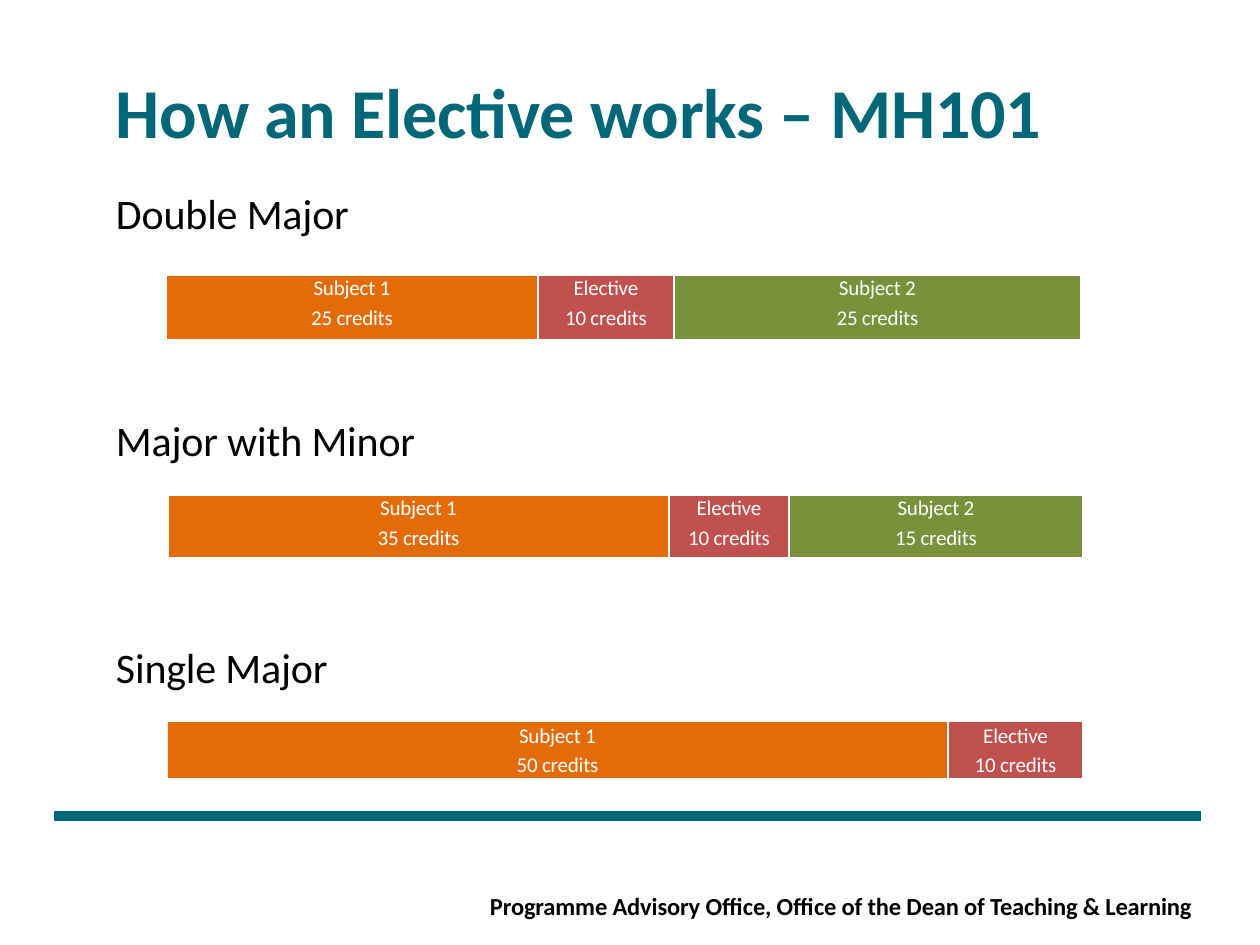
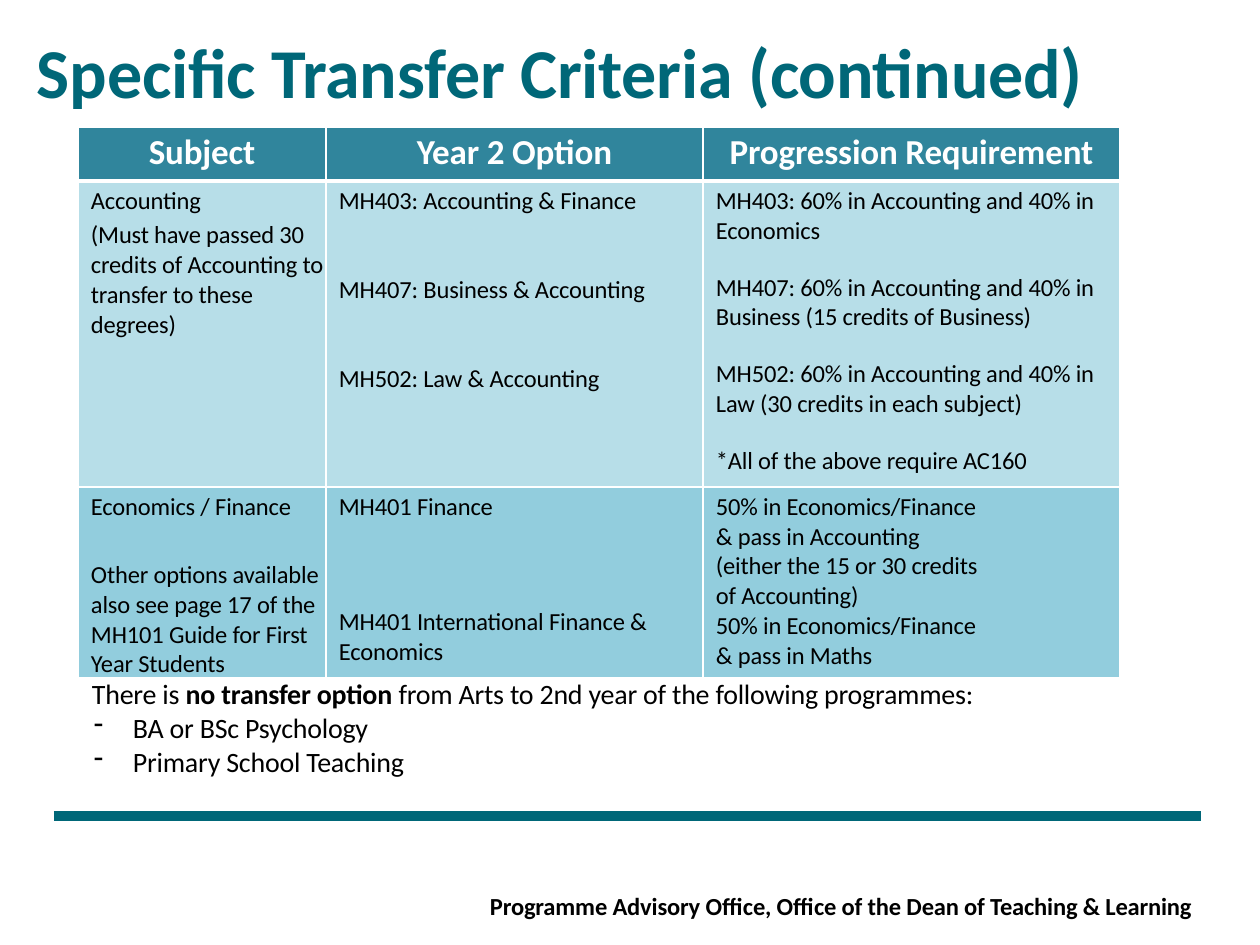
from lxml.etree import SubElement
from pptx import Presentation
from pptx.dml.color import RGBColor
from pptx.enum.shapes import MSO_CONNECTOR, MSO_SHAPE
from pptx.enum.text import MSO_ANCHOR, PP_ALIGN
from pptx.oxml import parse_xml
from pptx.oxml.ns import nsdecls, qn
from pptx.util import Pt

PX = 7257.14  # EMU per pixel, 126 px to the inch
FONT = "Calibri"
TEAL = RGBColor(0x00, 0x67, 0x78)
BLACK = RGBColor(0x00, 0x00, 0x00)
WHITE = RGBColor(0xFF, 0xFF, 0xFF)
ORANGE = RGBColor(0xE3, 0x6C, 0x09)
RED = RGBColor(0xC0, 0x50, 0x4D)
GREEN = RGBColor(0x77, 0x92, 0x3B)
HEADER_BLUE = RGBColor(0x30, 0x85, 0x9C)
PALE_BLUE = RGBColor(0xB7, 0xDE, 0xE8)
MID_BLUE = RGBColor(0x92, 0xCD, 0xDD)
FOOTER = "Programme Advisory Office, Office of the Dean of Teaching & Learning"

# Each bar: heading, heading top, left, top, height, segments of (name, credits, width, colour)
TABLE_BARS = [
    ("Double Major", 186, 166, 275, 66,
     [("Subject 1", 25, 372, ORANGE), ("Elective", 10, 136, RED), ("Subject 2", 25, 407, GREEN)]),
    ("Major with Minor", 413, 168, 495, 64,
     [("Subject 1", 35, 501, ORANGE), ("Elective", 10, 120, RED), ("Subject 2", 15, 294, GREEN)]),
]
SINGLE_BAR = ("Single Major", 640, 168, 722, 56,
              [("Subject 1", 50, 780, ORANGE), ("Elective", 10, 134, RED)])

# Each criteria row: height, colour, cells of (space before later paragraphs, paragraphs)
CRITERIA = [
    (306, PALE_BLUE, [
        (2.8, ["Accounting",
               "(Must have passed 30 credits of Accounting to transfer to these degrees)"]),
        (34, ["MH403: Accounting & Finance", "MH407: Business & Accounting",
              "MH502: Law & Accounting"]),
        (15.5, ["MH403: 60% in Accounting and 40% in Economics",
                "MH407: 60% in Accounting and 40% in Business (15 credits of Business)",
                "MH502: 60% in Accounting and 40% in Law (30 credits in each subject)",
                "*All of the above require AC160"]),
    ]),
    (191, MID_BLUE, [
        (22, ["Economics / Finance",
              "Other options available also see page 17 of the MH101 Guide for First Year Students"]),
        (49, ["MH401 Finance", "MH401 International Finance & Economics"]),
        (0, ["50% in Economics/Finance\v& pass in Accounting\v"
             "(either the 15 or 30 credits\vof Accounting)",
             "50% in Economics/Finance\v& pass in Maths"]),
    ]),
]


def px(value):
    return round(value * PX)


def style_paragraph(para, size, color, bold=False, align=PP_ALIGN.LEFT, gap=0):
    para.alignment = align
    para.space_before = Pt(gap)
    for span in para.runs:
        font = span.font
        font.name, font.size, font.bold = FONT, Pt(size), bold
        font.color.rgb = color
        span._r.get_or_add_rPr().set("spc", "-10")


def write(frame, lines, size, color, bold=False, align=PP_ALIGN.LEFT, gap=0):
    frame.text = "\n".join(lines)
    for index, para in enumerate(frame.paragraphs):
        style_paragraph(para, size, color, bold, align, gap if index else 0)


def set_insets(holder, left=0, top=0):
    holder.margin_left, holder.margin_top = px(left), px(top)
    holder.margin_right = holder.margin_bottom = 0


def add_text(page, left, top, width, height, lines, size, color, bold=False):
    box = page.shapes.add_textbox(px(left), px(top), px(width), px(height))
    frame = box.text_frame
    frame.word_wrap = True
    set_insets(frame, 1, 1)
    write(frame, lines, size, color, bold)
    return frame


def add_line(page, x1, y1, x2, y2, color, width):
    line = page.shapes.add_connector(MSO_CONNECTOR.STRAIGHT, px(x1), px(y1), px(x2), px(y2))
    line.line.color.rgb = color
    line.line.width = Pt(width)
    SubElement(line._element.spPr, qn("a:effectLst"))


def add_grid(page, left, top, widths, heights):
    frame = page.shapes.add_table(len(heights), len(widths), px(left), px(top),
                                  px(sum(widths)), px(sum(heights)))
    table = frame.table
    table.first_row = table.horz_banding = False
    for column, width in zip(table.columns, widths):
        column.width = px(width)
    for row, height in zip(table.rows, heights):
        row.height = px(height)
    return table


def style_cell(cell, color, inset_left, inset_top, top_line=1, bottom_line=1):
    cell.fill.solid()
    cell.fill.fore_color.rgb = color
    set_insets(cell, inset_left, inset_top)
    cell.vertical_anchor = MSO_ANCHOR.TOP
    properties = cell._tc.get_or_add_tcPr()
    sides = {"lnL": 1, "lnR": 1, "lnT": top_line, "lnB": bottom_line}
    for index, (side, width) in enumerate(sides.items()):
        properties.insert(index, parse_xml(
            f'<a:{side} {nsdecls("a")} w="{Pt(width)}"><a:solidFill>'
            f'<a:srgbClr val="{WHITE}"/></a:solidFill></a:{side}>'))


def start_page(deck, title, left, top, width):
    """Blank page with the shared title, rule and footer."""
    page = deck.slides.add_slide(deck.slide_layouts[6])
    add_line(page, 54, 816, 1201, 816, TEAL, 5.64)
    add_text(page, left, top, width, 87, [title], 40, TEAL, True)
    add_text(page, 489, 890, 720, 33, [FOOTER], 14, BLACK, True)
    return page


def segment_lines(name, credits):
    return [name, f"{credits} credits"]


def add_heading(page, text, top):
    add_text(page, 115, top, 400, 54, [text], 24, BLACK)


def add_table_bar(page, heading, heading_top, left, top, height, segments):
    add_heading(page, heading, heading_top)
    table = add_grid(page, left, top, [segment[2] for segment in segments], [height])
    for cell, (name, credits, _, color) in zip(table.rows[0].cells, segments):
        style_cell(cell, color, 0, 1, bottom_line=3)
        write(cell.text_frame, segment_lines(name, credits), 12, WHITE,
              align=PP_ALIGN.CENTER, gap=2.1)


def add_shape_bar(page, heading, heading_top, left, top, height, segments):
    add_heading(page, heading, heading_top)
    right = left + sum(segment[2] for segment in segments)
    # White frame and divider
    for x in (left, left + segments[0][2] + 1, right):
        add_line(page, x, top - 2, x, top + height + 4, WHITE, 1)
    for y, width in ((top - 1, 1), (top + height + 2, 3)):
        add_line(page, left - 1, y, right + 1, y, WHITE, width)
    # Coloured segments
    for name, credits, width, color in segments:
        box = page.shapes.add_shape(MSO_SHAPE.RECTANGLE, px(left), px(top),
                                    px(width - 1), px(height))
        box.shadow.inherit = False
        box.fill.solid()
        box.fill.fore_color.rgb = color
        box.line.fill.background()
        frame = box.text_frame
        frame.vertical_anchor = MSO_ANCHOR.TOP
        set_insets(frame)
        write(frame, segment_lines(name, credits), 12, WHITE, align=PP_ALIGN.CENTER, gap=2.2)
        left += width + 1


def add_criteria_table(page, left, top):
    heights = [54] + [row[0] for row in CRITERIA]
    table = add_grid(page, left, top, [248, 377, 417], heights)
    # Header row
    for cell, label in zip(table.rows[0].cells,
                           ("Subject", "Year 2 Option", "Progression Requirement")):
        style_cell(cell, HEADER_BLUE, 0, 4, bottom_line=3)
        write(cell.text_frame, [label], 20, WHITE, True, PP_ALIGN.CENTER)
    # Criteria rows
    for index, (_, color, contents) in enumerate(CRITERIA, 1):
        for cell, (gap, lines) in zip(table.rows[index].cells, contents):
            style_cell(cell, color, 13, 5, top_line=3 if index == 1 else 1)
            write(cell.text_frame, lines, 14, BLACK, gap=gap)


def add_transfer_note(page, left, top):
    frame = add_text(page, left, top, 920, 105,
                     ["There is ", "BA or BSc Psychology", "Primary School Teaching"], 16, BLACK)
    intro, *programmes = frame.paragraphs
    for text in ("no transfer option", " from Arts to 2nd year of the following programmes:"):
        intro.add_run().text = text
    style_paragraph(intro, 16, BLACK)
    intro.runs[1].font.bold = True
    for para in programmes:
        properties = para._p.get_or_add_pPr()
        properties.set("marL", str(px(41)))
        properties.set("indent", str(px(-39)))
        SubElement(properties, qn("a:buChar"), char="-")


def build_electives(deck):
    page = start_page(deck, "How an Elective works – MH101", 115, 68, 1000)
    for bar in TABLE_BARS:
        add_table_bar(page, *bar)
    add_shape_bar(page, *SINGLE_BAR)


def build_criteria(deck):
    page = start_page(deck, "Specific Transfer Criteria (continued)", 36, 28, 1120)
    add_criteria_table(page, 78, 127)
    add_transfer_note(page, 91, 676)


def main():
    deck = Presentation()
    deck.slide_width, deck.slide_height = px(1260), px(945)
    build_electives(deck)
    build_criteria(deck)
    deck.save("out.pptx")


if __name__ == "__main__":
    main()
